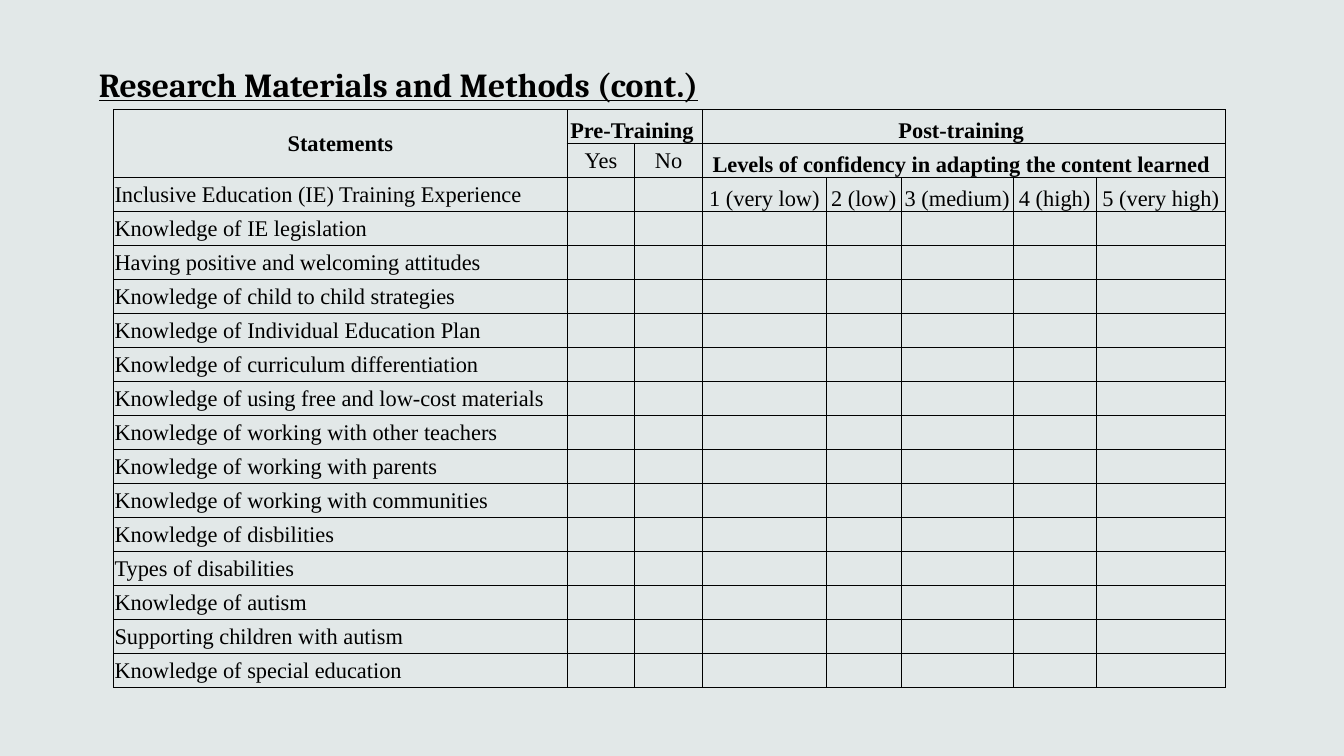
from dataclasses import dataclass

from lxml import etree
from pptx import Presentation, util as u
from pptx.dml.color import RGBColor
from pptx.enum import text
from pptx.oxml import ns


@dataclass(frozen=True)
class Theme:
    """Colours, fonts and sizes of the slide."""
    paper: str = "E2E8E8"
    ink: str = "000000"
    title_font: str = "Cambria"
    table_font: str = "Times New Roman"
    title_size: int = 24
    table_size: int = 16
    rule: float = 0.75


class SlideBuilder:
    """Adds styled elements, placed by percentages of the slide size."""

    def __init__(self, deck, theme):
        """Start a titled slide on a plain background."""
        self.deck, self.theme = deck, theme
        self.page = deck.slides.add_slide(deck.slide_layouts[5])
        fill = self.page.background.fill
        fill.solid()
        fill.fore_color.rgb = RGBColor.from_string(theme.paper)

    def across(self, percent):
        """Turn a share of the slide width into a length."""
        return round(self.deck.slide_width * percent / 100)

    def down(self, percent):
        """Turn a share of the slide height into a length."""
        return round(self.deck.slide_height * percent / 100)

    def style(self, para, font, size, bold, align):
        """Format a paragraph and its runs."""
        para.alignment = align
        for span in para.runs:
            span.font.name, span.font.size, span.font.bold = font, u.Pt(size), bold
            span.font.color.rgb = RGBColor.from_string(self.theme.ink)

    def title(self, words, left, top, width, height):
        """Fill and place the title placeholder."""
        box = self.page.shapes.title
        box.left, box.top = self.across(left), self.down(top)
        box.width, box.height = self.across(width), self.down(height)
        frame = box.text_frame
        frame.text = words
        frame.word_wrap = True
        frame.auto_size = text.MSO_AUTO_SIZE.NONE
        frame.vertical_anchor = text.MSO_ANCHOR.TOP
        para = frame.paragraphs[0]
        self.style(para, self.theme.title_font, self.theme.title_size, True, text.PP_ALIGN.LEFT)
        para.runs[0].font.underline = True

    def table(self, left, top, columns, row_count, row_height):
        """Add an empty ruled table and return it."""
        frame = self.page.shapes.add_table(
            row_count, len(columns), self.across(left), self.down(top),
            self.across(sum(columns)), self.down(row_height * row_count))
        table = frame.table
        table.first_row = table.horz_banding = False
        for column, width in zip(table.columns, columns):
            column.width = self.across(width)
        for row in table.rows:
            row.height = self.down(row_height)
        for cell in table.iter_cells():
            cell.margin_left = cell.margin_right = cell.margin_top = u.Inches(0.01)
            cell.margin_bottom = 0
            self.borders(cell)
            cell.fill.background()
        return table

    def borders(self, cell):
        """Rule all four sides of a cell."""
        properties = cell._tc.get_or_add_tcPr()
        for side in ("a:lnL", "a:lnR", "a:lnT", "a:lnB"):
            line = etree.SubElement(properties, ns.qn(side), w=str(u.Pt(self.theme.rule)))
            fill = etree.SubElement(line, ns.qn("a:solidFill"))
            etree.SubElement(fill, ns.qn("a:srgbClr"), val=self.theme.ink)

    def cell(self, table, row, column, words, bold=False, align=text.PP_ALIGN.CENTER,
             anchor=text.MSO_ANCHOR.MIDDLE, span=(1, 1)):
        """Write a cell, merging it over the given rows and columns."""
        cell = table.cell(row, column)
        if span != (1, 1):
            cell.merge(table.cell(row + span[0] - 1, column + span[1] - 1))
        cell.text_frame.text = words
        cell.vertical_anchor = anchor
        self.style(cell.text_frame.paragraphs[0], self.theme.table_font,
                   self.theme.table_size, bold, align)


STATEMENTS = [
    "Inclusive Education (IE) Training Experience",
    "Knowledge of IE legislation",
    "Having positive and welcoming attitudes",
    "Knowledge of child to child strategies",
    "Knowledge of Individual Education Plan",
    "Knowledge of curriculum differentiation",
    "Knowledge of using free and low-cost materials",
    "Knowledge of working with other teachers",
    "Knowledge of working with parents",
    "Knowledge of working with communities",
    "Knowledge of disbilities",
    "Types of disabilities",
    "Knowledge of autism",
    "Supporting children with autism",
    "Knowledge of special education",
]
LEVELS = ["1 (very low)", "2 (low)", "3 (medium)", "4 (high)", "5 (very high)"]
COLUMNS = [33.75, 5.03, 5.03, 9.23, 5.55, 8.36, 6.15, 9.64]
HEADER_ROWS = 2
FIRST_LEVEL = 3


def main():
    """Build and save the slide."""
    deck = Presentation()
    deck.slide_width, deck.slide_height = u.Inches(13.33), u.Inches(7.5)
    slide = SlideBuilder(deck, Theme())
    slide.title("Research Materials and Methods (cont.)", 6.6, 7.73, 51, 6.67)
    survey = slide.table(8.45, 14.5, COLUMNS, HEADER_ROWS + len(STATEMENTS), 4.5)

    bottom = text.MSO_ANCHOR.BOTTOM
    slide.cell(survey, 0, 0, "Statements", bold=True, span=(2, 1))
    slide.cell(survey, 0, 1, "Pre-Training ", bold=True, anchor=bottom, span=(1, 2))
    for row, heading in enumerate(
            ["Post-training ", "Levels of confidency in adapting the content learned "]):
        slide.cell(survey, row, FIRST_LEVEL, heading, bold=True, anchor=bottom,
                   span=(1, len(LEVELS)))
    for column, answer in enumerate(["Yes", "No"], 1):
        slide.cell(survey, 1, column, answer)
    for column, level in enumerate(LEVELS, FIRST_LEVEL):
        slide.cell(survey, HEADER_ROWS, column, level, anchor=bottom)
    for row, statement in enumerate(STATEMENTS, HEADER_ROWS):
        slide.cell(survey, row, 0, statement, align=text.PP_ALIGN.LEFT)
    deck.save("out.pptx")


if __name__ == "__main__":
    main()
